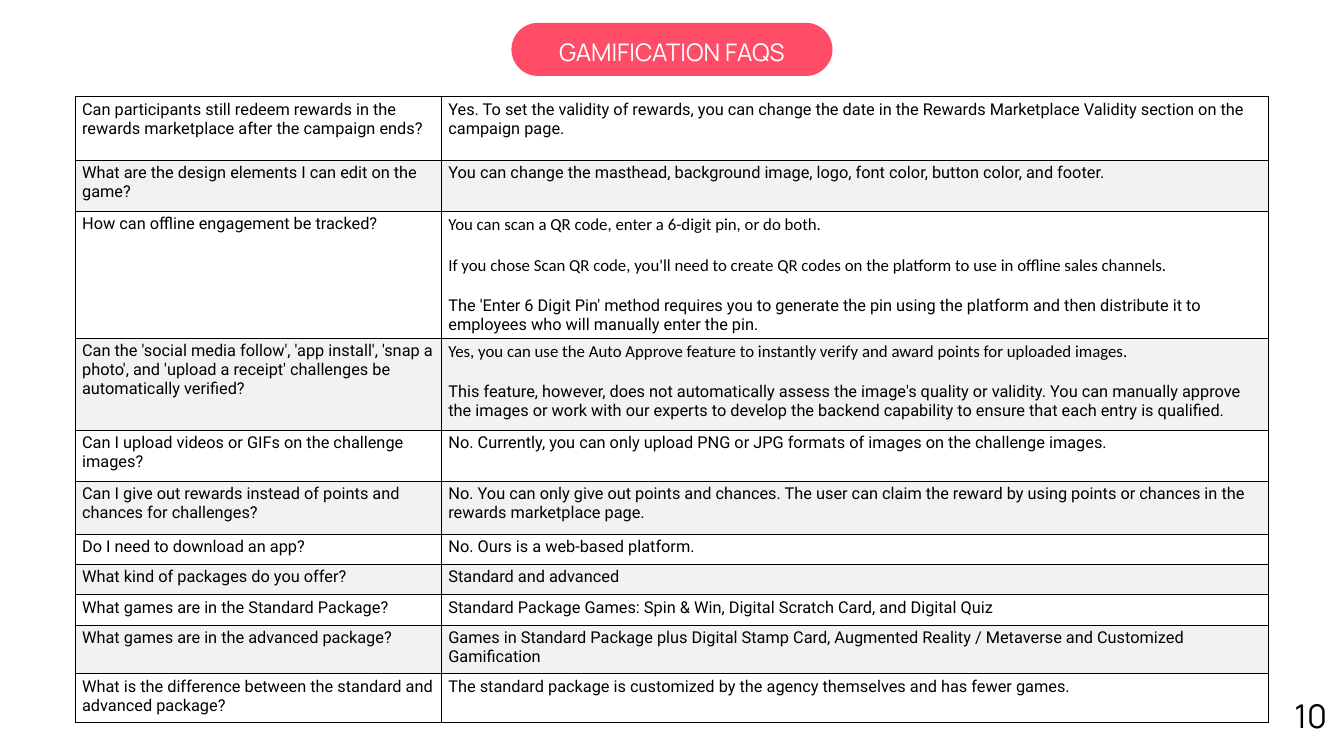
from dataclasses import dataclass

from lxml.etree import SubElement
from pptx import Presentation
from pptx.dml.color import RGBColor
from pptx.enum.shapes import MSO_SHAPE
from pptx.enum.text import MSO_ANCHOR, PP_ALIGN
from pptx.oxml.ns import qn
from pptx.util import Pt


@dataclass(frozen=True)
class Theme:
    """Colours, fonts and type sizes of the slide."""
    ink: str = "000000"
    paper: str = "FFFFFF"
    band: str = "F2F2F2"
    accent: str = "FF4D67"
    head: tuple = ("Manrope", 26)
    page: tuple = ("Manrope", 35)
    body: tuple = ("Roboto", 17.5)
    lead: tuple = ("Calibri", 18)
    rule: float = 0.75
    gap: float = 22


THEME = Theme()
TITLE = "GAMIFICATION FAQS"
PAGE = "10"
COLS = (392.4, 885.6)
FAQS = [
    (67.7, "Can participants still redeem rewards in the rewards marketplace after the campaign ends?",
     ["Yes. To set the validity of rewards, you can change the date in the Rewards Marketplace Validity section on the campaign page."]),
    (54.7, "What are the design elements I can edit on the game?",
     ["You can change the masthead, background image, logo, font color, button color, and footer."]),
    (135.4, "How can offline engagement be tracked?",
     ["You can scan a QR code, enter a 6-digit pin, or do both.",
      "If you chose Scan QR code, you'll need to create QR codes on the platform to use in offline sales channels.",
      "The 'Enter 6 Digit Pin' method requires you to generate the pin using the platform and then distribute it to employees who will manually enter the pin."]),
    (98.6, "Can the 'social media follow', 'app install', 'snap a photo', and 'upload a receipt' challenges be automatically verified?",
     ["Yes, you can use the Auto Approve feature to instantly verify and award points for uploaded images.",
      "This feature, however, does not automatically assess the image's quality or validity. You can manually approve the images or work with our experts to develop the backend capability to ensure that each entry is qualified."]),
    (54.7, "Can I upload videos or GIFs on the challenge images?",
     ["No. Currently, you can only upload PNG or JPG formats of images on the challenge images."]),
    (56.5, "Can I give out rewards instead of points and chances for challenges?",
     ["No. You can only give out points and chances. The user can claim the reward by using points or chances in the rewards marketplace page."]),
    (32.6, "Do I need to download an app?", ["No. Ours is a web-based platform."]),
    (32.6, "What kind of packages do you offer?", ["Standard and advanced"]),
    (32.6, "What games are in the Standard Package?",
     ["Standard Package Games: Spin & Win, Digital Scratch Card, and Digital Quiz"]),
    (52, "What games are in the advanced package?",
     ["Games in Standard Package plus Digital Stamp Card, Augmented Reality / Metaverse and Customized Gamification"]),
    (52, "What is the difference between the standard and advanced package?",
     ["The standard package is customized by the agency themselves and has fewer games."]),
]


def box(*sides):
    """Turn point values into lengths."""
    return [Pt(side) for side in sides]


def write(para, text, face, color):
    """Set the text and font of a paragraph."""
    para.text = text
    para.font.name, size = face
    para.font.size = Pt(size)
    para.font.color.rgb = RGBColor.from_string(color)


def paint(fill, color):
    """Fill with one solid colour."""
    fill.solid()
    fill.fore_color.rgb = RGBColor.from_string(color)


def frame(cell):
    """Rule all four sides of a cell."""
    props = cell._tc.get_or_add_tcPr()
    for side in ("lnL", "lnR", "lnT", "lnB"):
        line = SubElement(props, qn(f"a:{side}"), w=str(Pt(THEME.rule)))
        solid = SubElement(line, qn("a:solidFill"))
        SubElement(solid, qn("a:srgbClr"), val=THEME.ink)


def fill_cell(cell, texts, shaded):
    """Write, rule and shade one cell."""
    frame(cell)
    if shaded:
        paint(cell.fill, THEME.band)
    else:
        cell.fill.background()
    body = cell.text_frame
    for i, text in enumerate(texts):
        para = body.add_paragraph() if i else body.paragraphs[0]
        last = i == len(texts) - 1
        write(para, text, THEME.body if last else THEME.lead, THEME.ink)
        if i:
            para.space_before = Pt(THEME.gap)


def add_faqs(slide):
    """Add the table of questions and answers."""
    high = sum(row[0] for row in FAQS)
    grid = slide.shapes.add_table(len(FAQS), len(COLS), *box(80.8, 103.7, sum(COLS), high)).table
    grid.first_row = grid.horz_banding = False
    for col, wide in zip(grid.columns, COLS):
        col.width = Pt(wide)
    for r, (tall, ask, reply) in enumerate(FAQS):
        grid.rows[r].height = Pt(tall)
        for c, texts in enumerate(([ask], reply)):
            fill_cell(grid.cell(r, c), texts, r % 2 == 1)


def add_title(slide):
    """Add the title pill."""
    pill = slide.shapes.add_shape(MSO_SHAPE.ROUNDED_RECTANGLE, *box(548, 24.5, 344, 56.9))
    pill.adjustments[0] = 0.5
    pill.shadow.inherit = False
    paint(pill.fill, THEME.accent)
    pill.line.fill.background()
    pill.text_frame.vertical_anchor = MSO_ANCHOR.MIDDLE
    para = pill.text_frame.paragraphs[0]
    write(para, TITLE, THEME.head, THEME.paper)
    para.alignment = PP_ALIGN.CENTER
    para.line_spacing = Pt(36.4)


def add_page(slide):
    """Add the page number."""
    body = slide.shapes.add_textbox(*box(1386.7, 721.4, 46.8, 59.8)).text_frame
    body.word_wrap = True
    body.margin_left = body.margin_right = body.margin_top = body.margin_bottom = 0
    write(body.paragraphs[0], PAGE, THEME.page, THEME.ink)
    body.paragraphs[0].line_spacing = Pt(66.5)


def main():
    """Build the slide and save it."""
    deck = Presentation()
    deck.slide_width, deck.slide_height = box(1440, 810)
    slide = deck.slides.add_slide(deck.slide_layouts[6])
    add_faqs(slide)
    add_title(slide)
    add_page(slide)
    deck.save("out.pptx")


if __name__ == "__main__":
    main()
